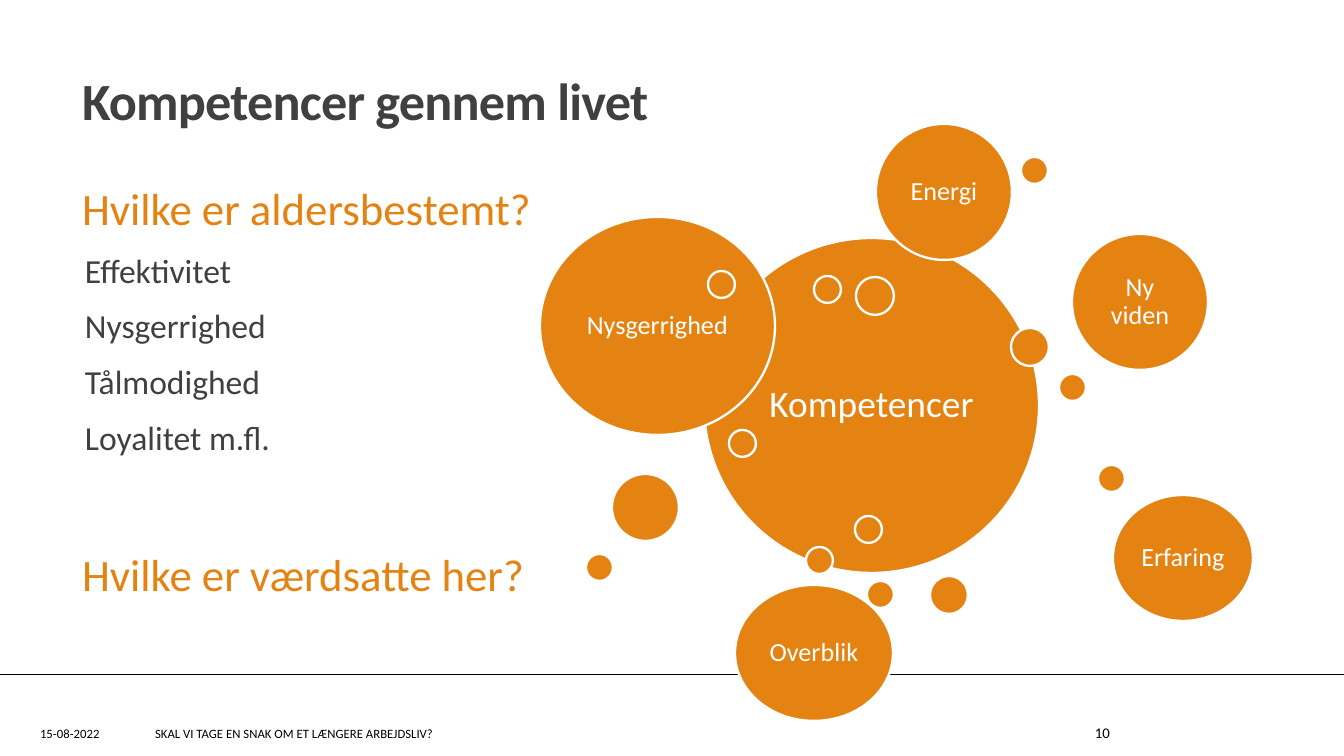
import pptx
import pptx.util
import pptx.dml.color
import pptx.enum.shapes
import pptx.enum.text
import pptx.oxml.ns
import lxml.etree

WIDTH, HEIGHT = 1344, 756
SCALE = 9144000 / WIDTH
ORANGE = pptx.dml.color.RGBColor(0xE4, 0x83, 0x12)
GREY = pptx.dml.color.RGBColor(0x40, 0x40, 0x40)
BLACK = pptx.dml.color.RGBColor(0, 0, 0)
WHITE = pptx.dml.color.RGBColor(0xFF, 0xFF, 0xFF)
ALIGN = pptx.enum.text.PP_ALIGN
ANCHOR = pptx.enum.text.MSO_ANCHOR
FONT = "Calibri"
INSETS = (13, 7, 13, 7)

TITLE = "Kompetencer gennem livet"
QUESTION = "Hvilke er aldersbestemt?"
COMPETENCES = ["Effektivitet", "Nysgerrighed", "Tålmodighed", "Loyalitet m.fl."]
SECOND_QUESTION = "Hvilke er værdsatte her?"
FOOTERS = [
    ("15-08-2022", 27, 106, 6.8, ALIGN.LEFT),
    ("SKAL VI TAGE EN SNAK OM ET LÆNGERE ARBEJDSLIV?", 142, 402, 6.8, ALIGN.LEFT),
    ("10", 978, 145, 7.9, ALIGN.RIGHT),
]
SMALL, MEDIUM, LARGE, BUBBLE = 27, 38, 67, 136
CIRCLES = [
    ("Kompetencer", 704, 238, 335, 335),
    ("", 806, 547, SMALL, SMALL),
    ("", 1059, 374, SMALL, SMALL),
    ("", 930, 576, MEDIUM, MEDIUM),
    ("", 814, 276, SMALL, SMALL),
    ("", 729, 430, SMALL, SMALL),
    ("Nysgerrighed", 540, 217, 235, 218),
    ("", 856, 277, MEDIUM, MEDIUM),
    ("", 612, 474, LARGE, LARGE),
    ("Ny viden", 1072, 234, BUBBLE, BUBBLE),
    ("", 1011, 328, MEDIUM, MEDIUM),
    ("", 586, 554, SMALL, SMALL),
    ("", 855, 516, SMALL, SMALL),
    ("Erfaring", 1113, 495, 140, 126),
    ("", 1098, 465, SMALL, SMALL),
    ("Overblik", 735, 585, 158, BUBBLE),
    ("", 867, 581, SMALL, SMALL),
    ("Energi", 876, 124, BUBBLE, BUBBLE),
    ("", 708, 271, SMALL, SMALL),
    ("", 1021, 157, SMALL, SMALL),
]


def px(value):
    return pptx.util.Emu(round(value * SCALE))


def place(box, left, top, width, height):
    box.left, box.top, box.width, box.height = map(px, (left, top, width, height))


def set_frame(frame, anchor, insets=INSETS):
    frame.word_wrap = True
    frame.auto_size = pptx.enum.text.MSO_AUTO_SIZE.NONE
    frame.vertical_anchor = anchor
    (frame.margin_left, frame.margin_top,
     frame.margin_right, frame.margin_bottom) = map(px, insets)


def write(para, text, size, color, align=ALIGN.LEFT, spacing=1.0,
          before=0, after=0, bold=False):
    para.alignment = align
    para.line_spacing = spacing
    para.space_before = pptx.util.Pt(before)
    para.space_after = pptx.util.Pt(after)
    span = para.add_run()
    span.text = text
    span.font.name = FONT
    span.font.size = pptx.util.Pt(size)
    span.font.bold = bold
    span.font.color.rgb = color
    return span


def set_bullet(para, tag, indent=0, **attributes):
    properties = para._p.get_or_add_pPr()
    properties.set("marL", str(px(indent)))
    properties.set("indent", str(-px(indent)))
    lxml.etree.SubElement(properties, pptx.oxml.ns.qn(tag), **attributes)


def add_text(page, text, left, top, width, height, size, color, anchor, align=ALIGN.LEFT):
    box = page.shapes.add_textbox(*map(px, (left, top, width, height)))
    set_frame(box.text_frame, anchor)
    write(box.text_frame.paragraphs[0], text, size, color, align)


def add_circle(page, label, left, top, width, height):
    circle = page.shapes.add_shape(
        pptx.enum.shapes.MSO_SHAPE.OVAL, *map(px, (left, top, width, height)))
    circle.shadow.inherit = False
    circle.fill.solid()
    circle.fill.fore_color.rgb = ORANGE
    circle.line.color.rgb = WHITE
    circle.line.width = pptx.util.Pt(1.25)
    if label:
        set_frame(circle.text_frame, ANCHOR.MIDDLE, (6, 6, 6, 6))
        size = 20 if label == "Kompetencer" else 14
        write(circle.text_frame.paragraphs[0], label, size, WHITE, ALIGN.CENTER, 0.9)


def add_footer_line(page):
    line = page.shapes.add_connector(
        pptx.enum.shapes.MSO_CONNECTOR.STRAIGHT, px(0), px(674), px(WIDTH), px(674))
    line.line.color.rgb = BLACK
    line.line.width = pptx.util.Pt(0.25)
    lxml.etree.SubElement(line._element.spPr, pptx.oxml.ns.qn("a:effectLst"))


def fill_placeholders(page):
    title, question, competences = page.placeholders
    place(title, 69, 71, 1109, 160)
    set_frame(title.text_frame, ANCHOR.TOP)
    span = write(title.text_frame.paragraphs[0], TITLE, 28, GREY, spacing=0.85, bold=True)
    span.font._element.set("spc", "-40")

    place(question, 69, 167, 583, 81)
    set_frame(question.text_frame, ANCHOR.MIDDLE)
    para = question.text_frame.paragraphs[0]
    set_bullet(para, "a:buNone")
    write(para, QUESTION, 24, ORANGE)

    place(competences, 75, 247, 470, 274)
    frame = competences.text_frame
    set_frame(frame, ANCHOR.TOP, (0, 7, 0, 7))
    for index, competence in enumerate(COMPETENCES):
        para = frame.add_paragraph() if index else frame.paragraphs[0]
        set_bullet(para, "a:buChar", 10, char=" ")
        write(para, competence, 18, GREY, spacing=0.9, before=9 if index else 0, after=1.5)


def main():
    deck = pptx.Presentation()
    deck.slide_width, deck.slide_height = px(WIDTH), px(HEIGHT)
    page = deck.slides.add_slide(deck.slide_layouts.get_by_name("Two Content"))
    add_footer_line(page)
    fill_placeholders(page)
    for circle in CIRCLES:
        add_circle(page, *circle)
    add_text(page, SECOND_QUESTION, 69, 519, 555, 89, 24, ORANGE, ANCHOR.BOTTOM)
    for text, left, width, size, align in FOOTERS:
        add_text(page, text, left, 713, width, 40, size, BLACK, ANCHOR.MIDDLE, align)
    deck.save("out.pptx")


if __name__ == "__main__":
    main()
